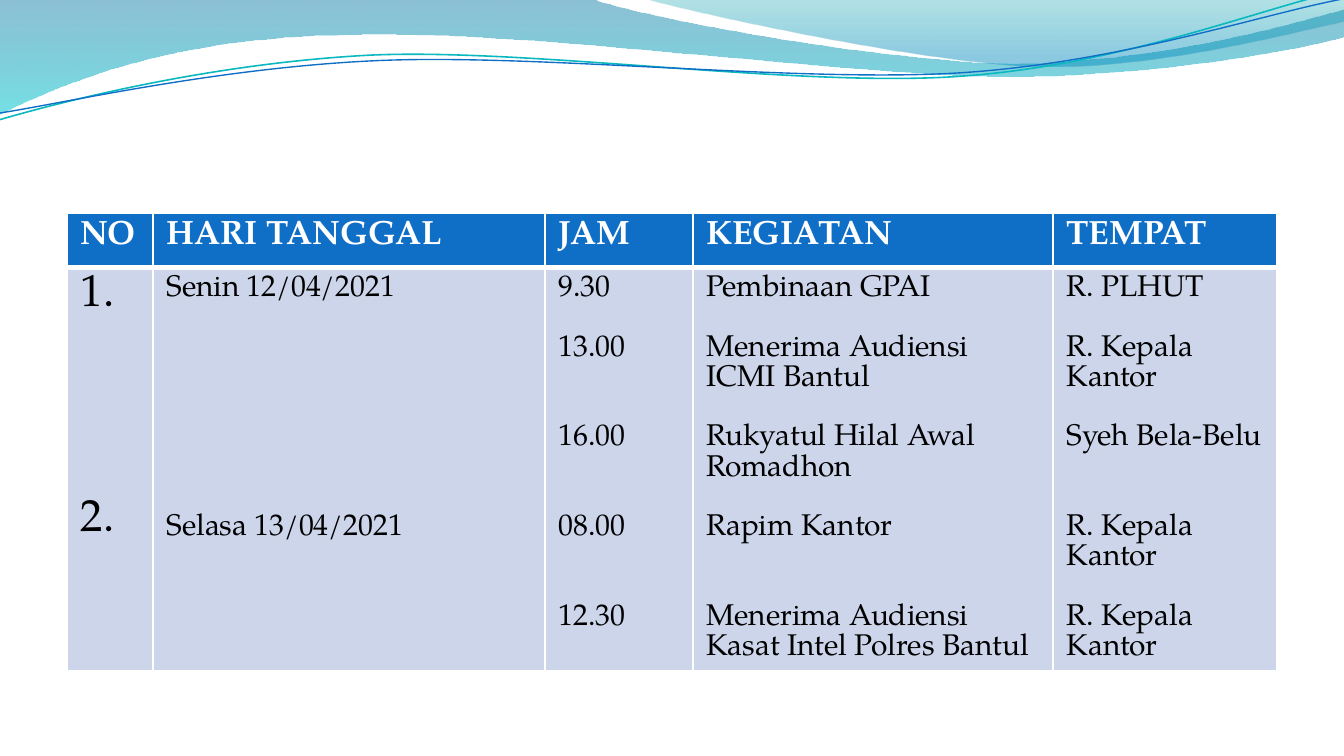
from dataclasses import dataclass
from math import cos, radians, sin
from lxml.etree import SubElement
from pptx import Presentation
from pptx.dml.color import RGBColor as RGB
from pptx.oxml.ns import qn
from pptx.util import Pt


@dataclass(frozen=True)
class Theme:
    """Colours, font and type sizes."""
    font: str = "TeX Gyre Pagella"
    white: str = "FFFFFF"
    ink: str = "000000"
    blue: str = "0F6FC6"
    teal: str = "0AB8BF"
    body: str = "CCD5EA"
    head_size: int = 18
    number_size: int = 24
    text_size: int = 16


def turn(point, center, angle):
    """Return the point turned clockwise about the center."""
    (x, y), (cx, cy), a = point, center, radians(angle)
    dx, dy = x - cx, y - cy
    return cx + dx * cos(a) - dy * sin(a), cy + dx * sin(a) + dy * cos(a)


class Deck:
    """Holds the theme and the current slide."""

    def __init__(self, theme, slide):
        self.theme, self.s = theme, slide

    def outline(self, start, segments, close):
        """Add a freeform of lines (one point) and cubic curves (three points)."""
        points = [(Pt(x), Pt(y)) for x, y in [start] + [p for seg in segments for p in seg]]
        builder = self.s.shapes.build_freeform(*points[0], scale=1.0)
        sp = builder.add_line_segments(points[1:], close=close).convert_to_shape()
        sp.shadow.inherit = False
        nodes = iter(list(sp._element.iter(qn("a:lnTo"))))
        for seg in segments:
            first, *others = [next(nodes) for _ in seg]
            if others:
                first.tag = qn("a:cubicBezTo")
            for node in others:
                first.append(node[0])
                node.getparent().remove(node)
        return sp

    def wave(self, start, segments, stops):
        """Add a closed shape with a translucent vertical gradient."""
        sp = self.outline(start, segments, True)
        sp.line.fill.background()
        sp.fill.gradient()
        sp.fill.gradient_angle = 270
        for stop, (position, color, opacity) in zip(sp.fill.gradient_stops, stops):
            stop.position = position
            stop.color.rgb = RGB.from_string(color)
            rgb = stop._gs.find(qn("a:srgbClr"))
            SubElement(rgb, qn("a:alpha"), val=str(opacity * 1000))

    def curve(self, start, segments, center, color, width, tilt=2.7):
        """Add an open curved line, tilted counter-clockwise."""
        level = [[turn(p, center, tilt) for p in seg] for seg in segments]
        sp = self.outline(turn(start, center, tilt), level, False)
        sp.rotation = 360 - tilt
        sp.fill.background()
        sp.line.color.rgb = RGB.from_string(color)
        sp.line.width = Pt(width)

    def cell(self, cell, lines, fill, color, size, bold, borders):
        """Write (text, blank lines before) pairs and style the cell."""
        tc_pr = cell._tc.get_or_add_tcPr()
        for side, width in borders.items():
            ln = SubElement(tc_pr, qn(f"a:ln{side}"), w=str(Pt(width)))
            SubElement(SubElement(ln, qn("a:solidFill")), qn("a:srgbClr"), val=self.theme.white)
        cell.fill.solid()
        cell.fill.fore_color.rgb = RGB.from_string(fill)
        tf = cell.text_frame
        for i, (text, gap) in enumerate(lines):
            p = tf.add_paragraph() if i else tf.paragraphs[0]
            if gap:
                p.space_before = Pt(gap * size)
            r = p.add_run()
            r.text = text
            r.font.color.rgb = RGB.from_string(color)
            for name, value in {"name": self.theme.font, "size": Pt(size), "bold": bold}.items():
                setattr(r.font, name, value)

    def table(self, left, top, widths, heights, columns):
        """Add a header row and one body row from (heading, lines) columns."""
        t = self.theme
        tbl = self.s.shapes.add_table(2, len(widths), Pt(left), Pt(top),
                                      Pt(sum(widths)), Pt(sum(heights))).table
        for row, height in zip(tbl.rows, heights):
            row.height = Pt(height)
        for i, (width, (heading, lines)) in enumerate(zip(widths, columns)):
            tbl.columns[i].width = Pt(width)
            size = t.text_size if i else t.number_size
            self.cell(tbl.cell(0, i), [(heading, 0)], t.blue, t.white, t.head_size, True,
                      {"L": 1, "R": 1, "T": 1, "B": 3})
            self.cell(tbl.cell(1, i), lines, t.body, t.ink, size, False,
                      {"L": 1, "R": 1, "T": 3, "B": 1})


def main():
    """Build the weekly agenda slide."""
    prs = Presentation()
    prs.slide_width, prs.slide_height = Pt(720), Pt(405)
    theme = Theme()
    deck = Deck(theme, prs.slides.add_slide(prs.slide_layouts[6]))

    deck.wave((0, 0), [
        [(316.8, -0.7)],
        [(342.7, 9.4), (478.1, 33.8), (545.8, 33.8)],
        [(614.2, 33.8), (689.8, 13.7), (720, 5)],
        [(720.7, 19.4)],
        [(707.8, 23.8), (626.4, 41), (537.1, 41)],
        [(447.8, 40.3), (275, 15.1), (185, 18.7)],
        [(92.9, 19.4), (33.1, 44.6), (-0.7, 61.2)],
    ], [(0, "0074A1", 45), (1, "00C6CF", 55)])
    deck.wave((344.9, -0.7), [
        [(366.5, 5.8), (491, 33.1), (553.7, 35.3)],
        [(616.3, 37.4), (691.9, 17.3), (720, 11.5)],
        [(720, 0)],
    ], [(0, "00A1A9", 30), (0.8, "008BBF", 45)])
    deck.curve((0, 64.1), [
        [(34.6, 54), (113.8, 33.8), (199.4, 29.5)],
        [(285.1, 25.9), (426.2, 46.8), (512.6, 41)],
        [(599.8, 35.3), (676.1, 4.3), (718.6, -5)],
    ], (359.3, 31.3), theme.teal, 0.85)
    deck.curve((0, 60.5), [
        [(33.8, 55.4), (118.1, 36), (203.8, 32.4)],
        [(290.2, 28.8), (429.8, 44.6), (516.2, 38.9)],
        [(601.9, 33.1), (677.5, 7.2), (720, -0.7)],
    ], (359.6, 32), theme.blue, 0.75)

    deck.table(36, 114.2, [46, 210, 79.2, 193, 119.8], [29.2, 215.5], [
        ("NO", [("1.", 0), ("2.", 4)]),
        ("HARI TANGGAL", [("Senin 12/04/2021", 0), ("Selasa 13/04/2021", 7)]),
        ("JAM", [("9.30", 0), ("13.00", 1), ("16.00", 2), ("08.00", 2), ("12.30", 2)]),
        ("KEGIATAN", [("Pembinaan GPAI", 0), ("Menerima Audiensi ICMI Bantul", 1),
                      ("Rukyatul Hilal Awal Romadhon", 1), ("Rapim Kantor", 1),
                      ("Menerima Audiensi Kasat Intel Polres Bantul", 2)]),
        ("TEMPAT", [("R. PLHUT", 0), ("R. Kepala Kantor", 1), ("Syeh Bela-Belu", 1),
                    ("R. Kepala Kantor", 2), ("R. Kepala Kantor", 1)]),
    ])
    prs.save("out.pptx")


if __name__ == "__main__":
    main()
